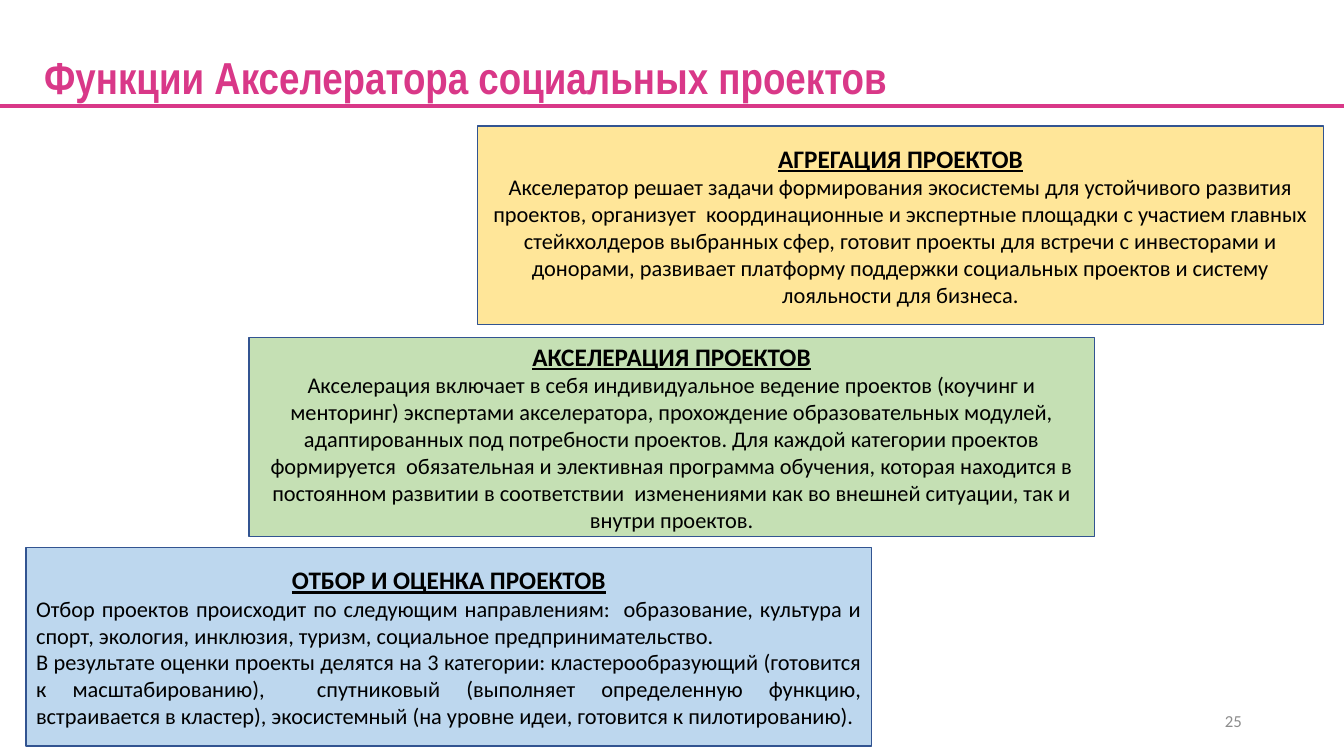
from dataclasses import dataclass

from lxml import etree
from pptx import Presentation
from pptx import util as u
from pptx.dml.color import RGBColor
from pptx.enum import shapes, text
from pptx.oxml.ns import qn

COLOURS = {
    "accent": "D93888",
    "border": "325491",
    "ink": "000000",
    "number": "8C8C8C",
    "selection": "BDD7EE",
    "acceleration": "C5E0B4",
    "aggregation": "FFE699",
}
STEP_WIDTH, STEP_HEIGHT = 604, 142
CENTER = text.PP_ALIGN.CENTER
JUSTIFY = text.PP_ALIGN.JUSTIFY


@dataclass
class Style:
    size: float
    colour: str
    font: str = "Calibri"
    bold: bool = False
    underline: bool = False


@dataclass
class Step:
    left: float
    top: float
    fill: str
    heading: str
    body: list[str]
    align: text.PP_ALIGN = CENTER


HEADING = Style(18, "ink", bold=True, underline=True)
BODY = Style(16, "ink")
TITLE = Style(32, "accent", "Arial Narrow", bold=True)
NUMBER = Style(12, "number")

STEPS = [
    Step(18.7, 391, "selection", "ОТБОР И ОЦЕНКА ПРОЕКТОВ", [
        "Отбор проектов происходит по следующим направлениям:  образование, "
        "культура и спорт, экология, инклюзия, туризм, социальное "
        "предпринимательство.",
        "В результате оценки проекты делятся на 3 категории: "
        "кластерообразующий (готовится к масштабированию),  спутниковый "
        "(выполняет определенную функцию, встраивается в кластер), "
        "экосистемный (на уровне идеи, готовится к пилотированию).",
    ], JUSTIFY),
    Step(177.8, 241.2, "acceleration", "АКСЕЛЕРАЦИЯ ПРОЕКТОВ", [
        "Акселерация включает в себя индивидуальное ведение проектов (коучинг "
        "и менторинг) экспертами акселератора, прохождение образовательных "
        "модулей, адаптированных под потребности проектов. Для каждой "
        "категории проектов формируется  обязательная и элективная программа "
        "обучения, которая находится в постоянном развитии в соответствии  "
        "изменениями как во внешней ситуации, так и внутри проектов.",
    ]),
    Step(341.2, 90, "aggregation", "АГРЕГАЦИЯ ПРОЕКТОВ", [
        "Акселератор решает задачи формирования экосистемы для устойчивого "
        "развития проектов, организует  координационные и экспертные площадки "
        "с участием главных стейкхолдеров выбранных сфер, готовит проекты для "
        "встречи с инвесторами и донорами, развивает платформу поддержки "
        "социальных проектов и систему лояльности для бизнеса.",
    ]),
]


def colour(name: str) -> RGBColor:
    return RGBColor.from_string(COLOURS[name])


def add_span(para, words: str, style: Style) -> None:
    span = para.add_run()
    span.text = words
    span.font.name = style.font
    span.font.size = u.Pt(style.size)
    span.font.bold = style.bold
    span.font.underline = style.underline
    span.font.color.rgb = colour(style.colour)


def add_label(page, left: float, top: float, width: float, height: float,
              words: str, style: Style, align: text.PP_ALIGN,
              spacing: float = 1.0) -> None:
    box = page.shapes.add_textbox(u.Pt(left), u.Pt(top), u.Pt(width), u.Pt(height))
    frame = box.text_frame
    frame.word_wrap = True
    frame.vertical_anchor = text.MSO_ANCHOR.MIDDLE
    para = frame.paragraphs[0]
    para.alignment = align
    para.line_spacing = spacing
    add_span(para, words, style)


def add_step(page, step: Step) -> None:
    box = page.shapes.add_shape(
        shapes.MSO_SHAPE.RECTANGLE, u.Pt(step.left), u.Pt(step.top),
        u.Pt(STEP_WIDTH), u.Pt(STEP_HEIGHT))
    box.shadow.inherit = False
    box.fill.solid()
    box.fill.fore_color.rgb = colour(step.fill)
    box.line.color.rgb = colour("border")
    box.line.width = u.Pt(1)
    frame = box.text_frame
    frame.word_wrap = True
    frame.vertical_anchor = text.MSO_ANCHOR.MIDDLE
    heading = frame.paragraphs[0]
    heading.alignment = CENTER
    add_span(heading, step.heading, HEADING)
    for words in step.body:
        para = frame.add_paragraph()
        para.alignment = step.align
        add_span(para, words, BODY)


def add_rule(page, top: float, width: float) -> None:
    rule = page.shapes.add_connector(
        shapes.MSO_CONNECTOR.STRAIGHT, u.Pt(0), u.Pt(top), u.Pt(width), u.Pt(top))
    rule.line.color.rgb = colour("accent")
    rule.line.width = u.Pt(3)
    etree.SubElement(rule._element.spPr, qn("a:effectLst"))


def main() -> None:
    deck = Presentation()
    deck.slide_width, deck.slide_height = u.Pt(960), u.Pt(540)
    page = deck.slides.add_slide(deck.slide_layouts[6])
    add_label(page, 673.2, 500.4, 221, 28.8, "25", NUMBER, text.PP_ALIGN.RIGHT)
    for step in STEPS:
        add_step(page, step)
    add_label(page, 24.5, 31.7, 924.5, 51.1,
              "Функции Акселератора социальных проектов", TITLE,
              text.PP_ALIGN.LEFT, 0.9)
    add_rule(page, 75.6, 960)
    deck.save("out.pptx")


if __name__ == "__main__":
    main()
